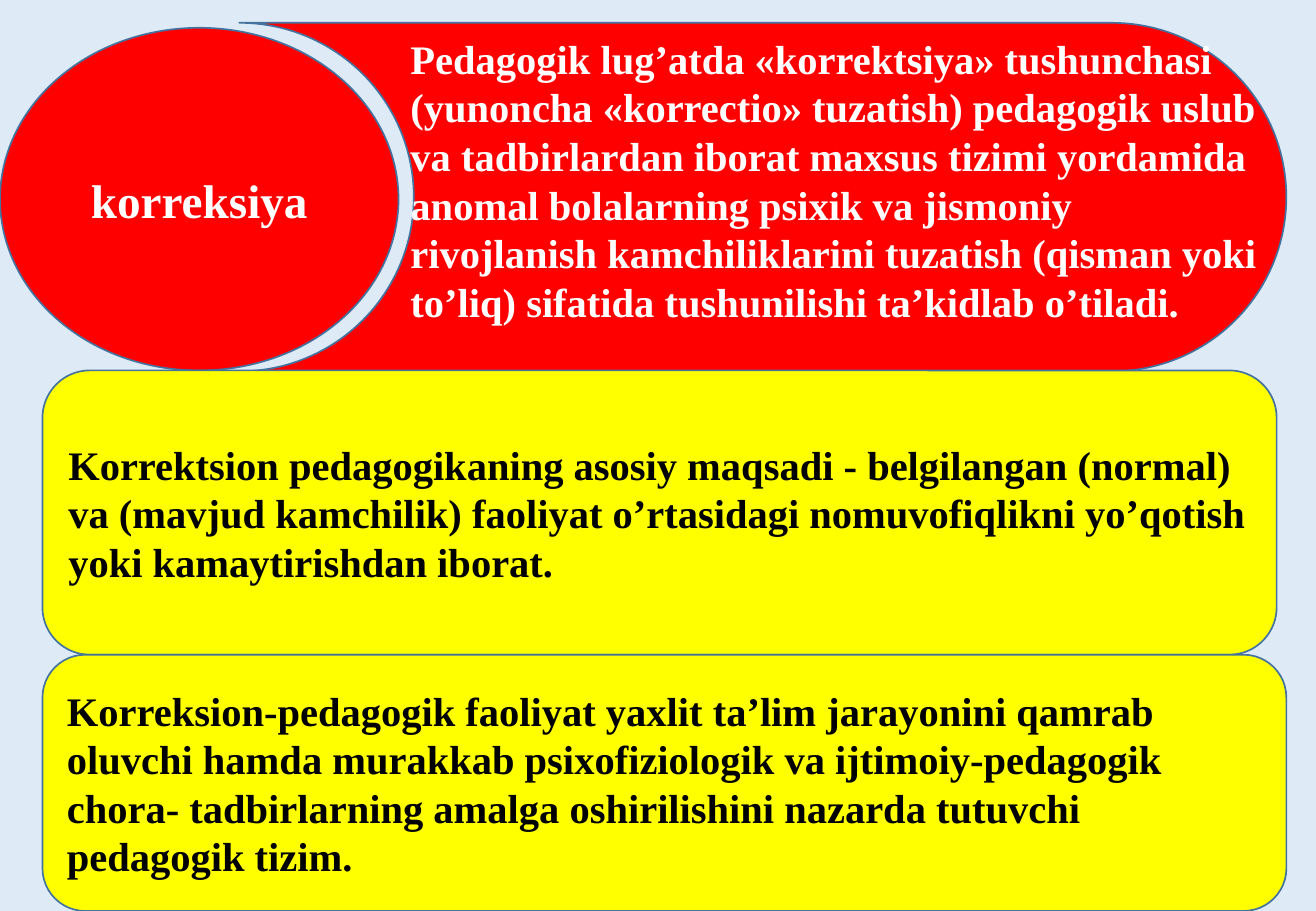
from dataclasses import dataclass

from pptx import Presentation
from pptx.dml.color import RGBColor
from pptx.enum.shapes import MSO_SHAPE
from pptx.enum.text import MSO_ANCHOR, MSO_AUTO_SIZE, PP_ALIGN
from pptx.util import Pt

TERM = "korreksiya"
MEANING = (
    "Pedagogik lug’atda «korrektsiya» tushunchasi (yunoncha «korrectio» tuzatish) "
    "pedagogik uslub va tadbirlardan iborat maxsus tizimi yordamida anomal "
    "bolalarning psixik va jismoniy rivojlanish kamchiliklarini tuzatish (qisman "
    "yoki to’liq) sifatida tushunilishi ta’kidlab o’tiladi."
)
# Text, width and height of each panel, from top to bottom
PANELS = [
    ("Korrektsion pedagogikaning asosiy maqsadi - belgilangan (normal) va (mavjud "
     "kamchilik) faoliyat o’rtasidagi nomuvofiqlikni yo’qotish yoki "
     "kamaytirishdan iborat.", 731.5, 168.5),
    ("Korreksion-pedagogik faoliyat yaxlit ta’lim jarayonini qamrab oluvchi hamda "
     "murakkab psixofiziologik va ijtimoiy-pedagogik chora- tadbirlarning amalga "
     "oshirilishini nazarda tutuvchi pedagogik tizim.", 737.3, 151.9),
]


@dataclass(frozen=True)
class Theme:
    back: RGBColor = RGBColor(0xDE, 0xEB, 0xF7)
    red: RGBColor = RGBColor(0xFF, 0, 0)
    yellow: RGBColor = RGBColor(0xFF, 0xFF, 0)
    edge: RGBColor = RGBColor(0x43, 0x73, 0x9E)
    white: RGBColor = RGBColor(0xFF, 0xFF, 0xFF)
    black: RGBColor = RGBColor(0, 0, 0)
    font: str = "Times New Roman"
    head: int = 28
    body: int = 24


THEME = Theme()
WIDTH, HEIGHT = 780, 540
MID = 219.6  # where the red band ends and the panels start
TOP = 16.5
TERM_WIDTH = 236.2
LEFT = 25.2


def put_text(shape, text, color=THEME.black, size=THEME.body,
             align=PP_ALIGN.LEFT, anchor=MSO_ANCHOR.MIDDLE):
    frame = shape.text_frame
    frame.word_wrap = True
    frame.vertical_anchor = anchor
    para = frame.paragraphs[0]
    para.alignment = align
    run = para.add_run()
    run.text = text
    run.font.name = THEME.font
    run.font.size = Pt(size)
    run.font.bold = True
    run.font.color.rgb = color


def add_form(slide, kind, box, fill):
    form = slide.shapes.add_shape(kind, *map(Pt, box))
    form.shadow.inherit = False
    form.fill.solid()
    form.fill.fore_color.rgb = fill
    form.line.color.rgb = THEME.edge
    form.line.width = Pt(1)
    return form


def main():
    deck = Presentation()
    deck.slide_width, deck.slide_height = Pt(WIDTH), Pt(HEIGHT)
    slide = deck.slides.add_slide(deck.slide_layouts[6])
    slide.background.fill.solid()
    slide.background.fill.fore_color.rgb = THEME.back

    term = add_form(slide, MSO_SHAPE.OVAL, (0, TOP, TERM_WIDTH, MID - TOP), THEME.red)
    put_text(term, TERM, color=THEME.white, size=THEME.head, align=PP_ALIGN.CENTER)

    band = add_form(slide, MSO_SHAPE.FLOWCHART_STORED_DATA,
                    (141.8, 13.5, 620.6, 206.6), THEME.red)
    band.rotation = 180

    note = slide.shapes.add_textbox(*map(Pt, (TERM_WIDTH, TOP, 519.8, 181.4)))
    put_text(note, MEANING, color=THEME.white, anchor=MSO_ANCHOR.TOP)
    note.text_frame.auto_size = MSO_AUTO_SIZE.SHAPE_TO_FIT_TEXT

    top = MID
    for text, width, height in PANELS:
        panel = add_form(slide, MSO_SHAPE.ROUNDED_RECTANGLE,
                         (LEFT, top, width, height), THEME.yellow)
        put_text(panel, text)
        top += height

    deck.save("out.pptx")


if __name__ == "__main__":
    main()
